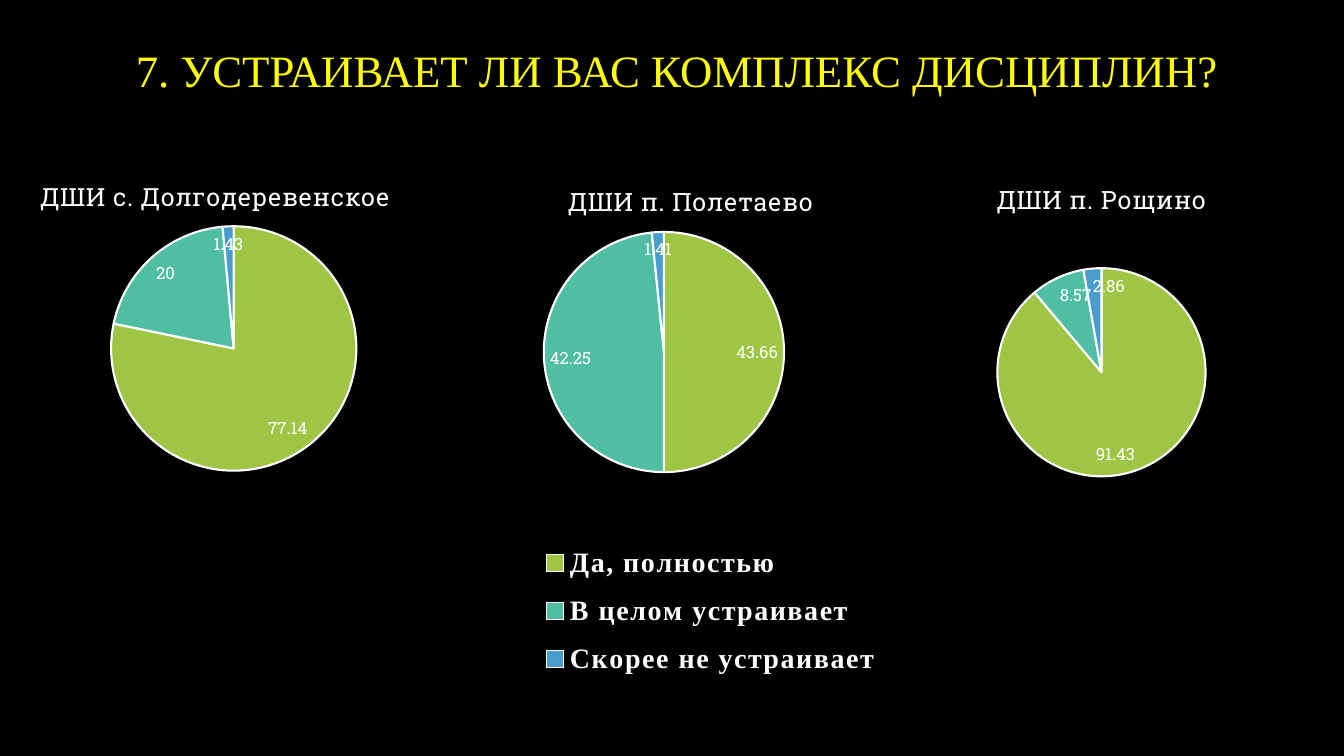
from lxml.etree import SubElement
from pptx import Presentation
from pptx.chart.data import CategoryChartData
from pptx.dml.color import RGBColor
from pptx.enum.chart import XL_CHART_TYPE, XL_LABEL_POSITION, XL_LEGEND_POSITION
from pptx.enum.text import MSO_ANCHOR, PP_ALIGN
from pptx.oxml import parse_xml
from pptx.oxml.ns import nsdecls, qn
from pptx.util import Inches, Pt

HUES = {"back": "000000", "head": "FFFF00", "text": "FFFFFF",
        "yes": "9EC544", "mostly": "50BEA3", "no": "4A9CCC"}
SLAB = "Roboto Slab"
TIMES = "Times New Roman"
KEYS = ["Да, полностью", "В целом устраивает", "Скорее не устраивает"]
PIES = [
    dict(text="ДШИ с. Долгодеревенское", box=(-0.16, 1.6, 4.59, 3.08),
         vals=(77.14, 20, 1.43), plot=(0.08, 0.21, 0.92, 0.79)),
    dict(text="ДШИ п. Полетаево", box=(3.54, 1.6, 6.62, 5.65), cats=KEYS,
         vals=(43.66, 42.25, 1.41), plot=(0.28, 0.11, 0.36, 0.45),
         key=(0.27, 0.65, 0.52, 0.28)),
    dict(text="ДШИ п. Рощино", box=(8.86, 1.62, 4.13, 3.24),
         vals=(91.43, 8.57, 2.86), plot=(0.25, 0.32, 0.5, 0.64)),
]


def tint(name):
    """Return the named colour."""
    return RGBColor.from_string(HUES[name])


def style(font, size, face=SLAB, hue="text", bold=False):
    """Set the size, face, colour and weight of a font."""
    font.size, font.name, font.bold = Pt(size), face, bold
    font.color.rgb = tint(hue)


def write(frame, text, space=0, **form):
    """Put one centred line of formatted text in a frame."""
    line = frame.paragraphs[0]
    line.alignment = PP_ALIGN.CENTER
    run = line.add_run()
    run.text = text
    style(run.font, **form)
    if space:
        run._r.get_or_add_rPr().set("spc", str(space))


def place(part, index, rect, inner=False):
    """Give a chart part a manual layout in fractions of the chart."""
    for old in part.findall(qn("c:layout")):
        part.remove(old)
    node = parse_xml(f"<c:layout {nsdecls('c')}><c:manualLayout/></c:layout>")
    pairs = [("layoutTarget", "inner")] if inner else []
    pairs += [("xMode", "edge"), ("yMode", "edge"), *zip("xywh", rect)]
    for tag, val in pairs:
        SubElement(node[0], qn(f"c:{tag}")).set("val", str(val))
    part.insert(index, node)


def add_key(chart, rect):
    """Add the legend shared by the three pies."""
    chart.has_legend = True
    key = chart.legend
    key.position = XL_LEGEND_POSITION.BOTTOM
    key.include_in_layout = False
    style(key.font, 20, TIMES, bold=True)
    for props in key._element.iter(qn("a:defRPr")):
        props.set("spc", "100")
    place(key._element, 1, rect)


def add_pie(slide, box, text, vals, plot, cats=("1", "2", "3"), key=None):
    """Draw one school's pie in the given box."""
    data = CategoryChartData()
    data.categories = cats
    data.add_series("Series 1", vals)
    chart = slide.shapes.add_chart(
        XL_CHART_TYPE.PIE, *map(Inches, box), data).chart
    style(chart.font, 10)
    chart.has_title = True
    write(chart.chart_title.text_frame, text, size=18, space=50)
    pie = chart.plots[0]
    pie.vary_by_categories = True
    for index, name in enumerate(("yes", "mostly", "no")):
        form = pie.series[0].points[index].format
        form.fill.solid()
        form.fill.fore_color.rgb = tint(name)
        form.line.color.rgb = tint("text")
        form.line.width = Pt(1.5)
    pie.has_data_labels = True
    tags = pie.data_labels
    tags.show_value = True
    tags.show_percentage = False
    tags.position = XL_LABEL_POSITION.INSIDE_END
    style(tags.font, 12)
    place(pie._element.getparent(), 0, plot, inner=True)
    chart.has_legend = False
    if key:
        add_key(chart, key)


def add_head(slide, box, text):
    """Place the slide's heading in the given box."""
    frame = slide.shapes.add_textbox(*map(Inches, box)).text_frame
    frame.word_wrap = True
    frame.vertical_anchor = MSO_ANCHOR.MIDDLE
    write(frame, text, size=32, face=TIMES, hue="head")
    frame.paragraphs[0].line_spacing = 0.9


def main():
    """Build and save the slide."""
    deck = Presentation()
    deck.slide_width, deck.slide_height = Inches(13.33), Inches(7.5)
    slide = deck.slides.add_slide(deck.slide_layouts[6])
    fill = slide.background.fill
    fill.solid()
    fill.fore_color.rgb = tint("back")
    add_head(slide, (0.44, 0.16, 12.55, 1.13),
             "7. УСТРАИВАЕТ ЛИ ВАС КОМПЛЕКС ДИСЦИПЛИН?")
    for pie in PIES:
        add_pie(slide, **pie)
    deck.save("out.pptx")


if __name__ == "__main__":
    main()
